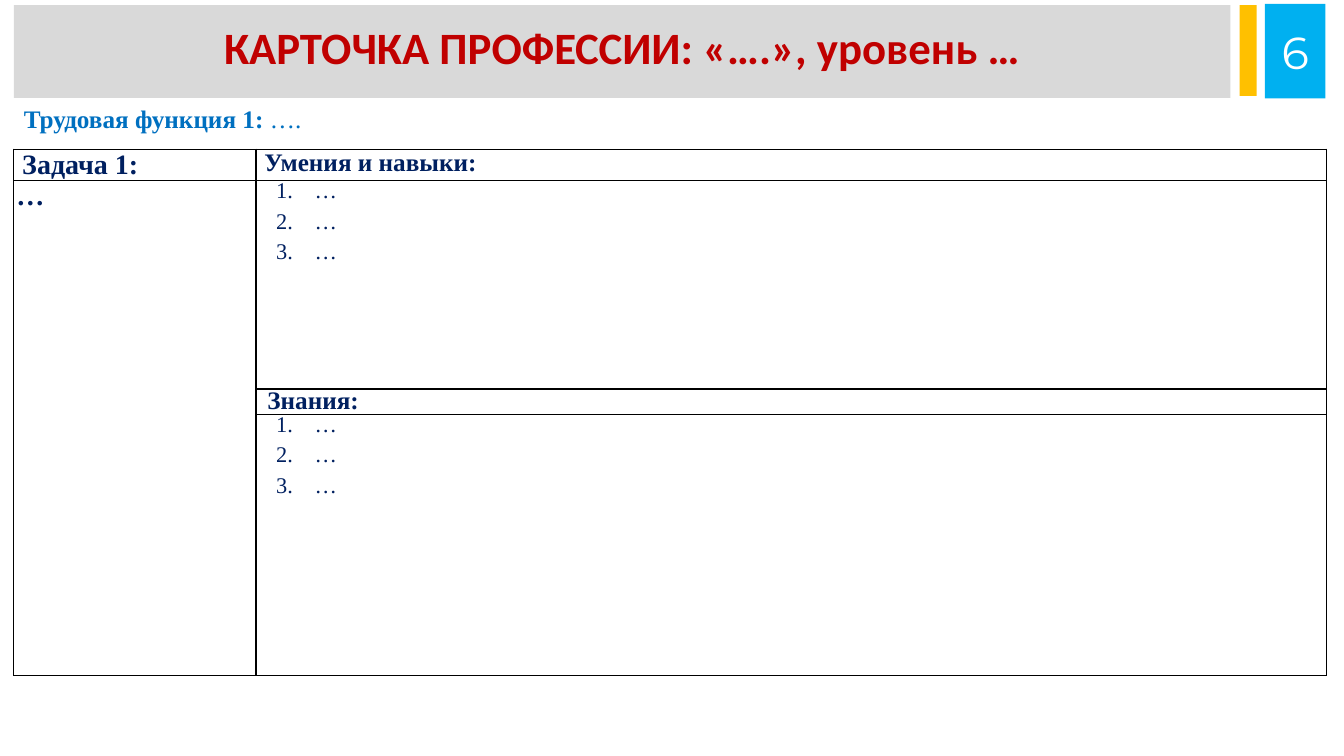
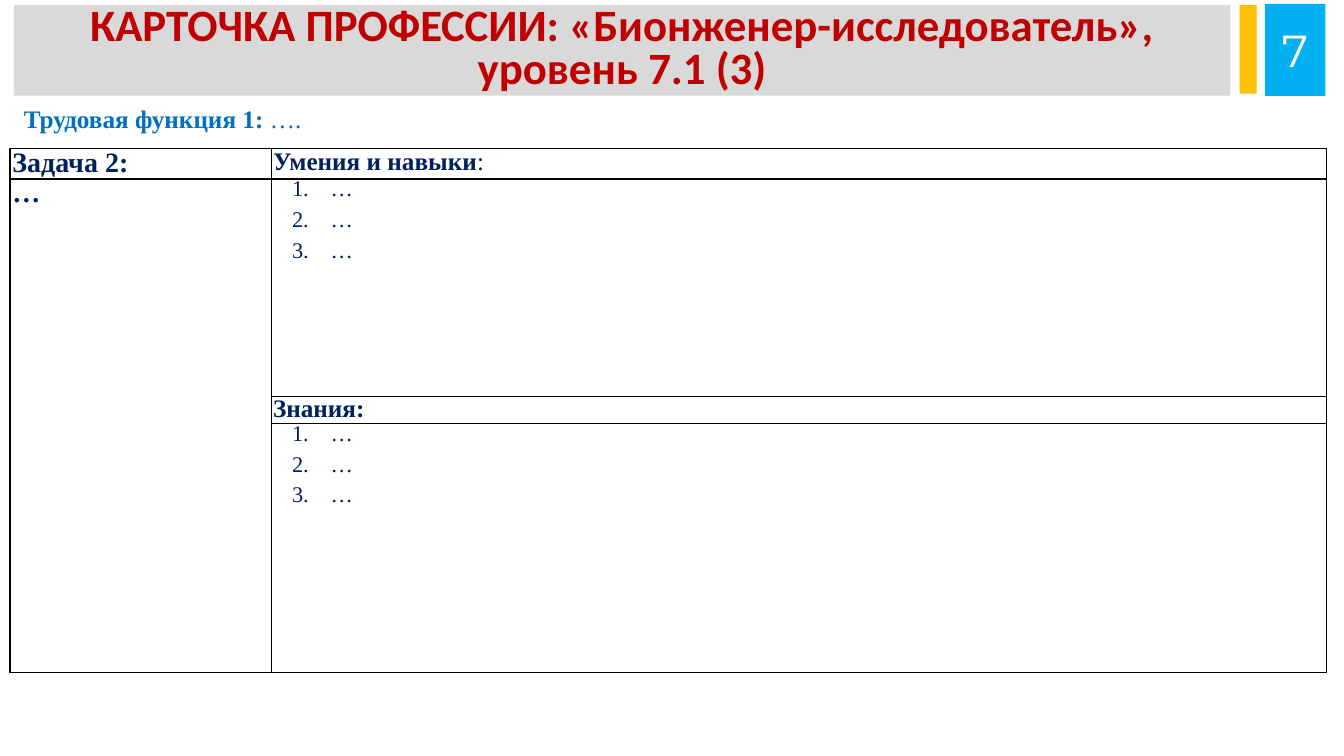
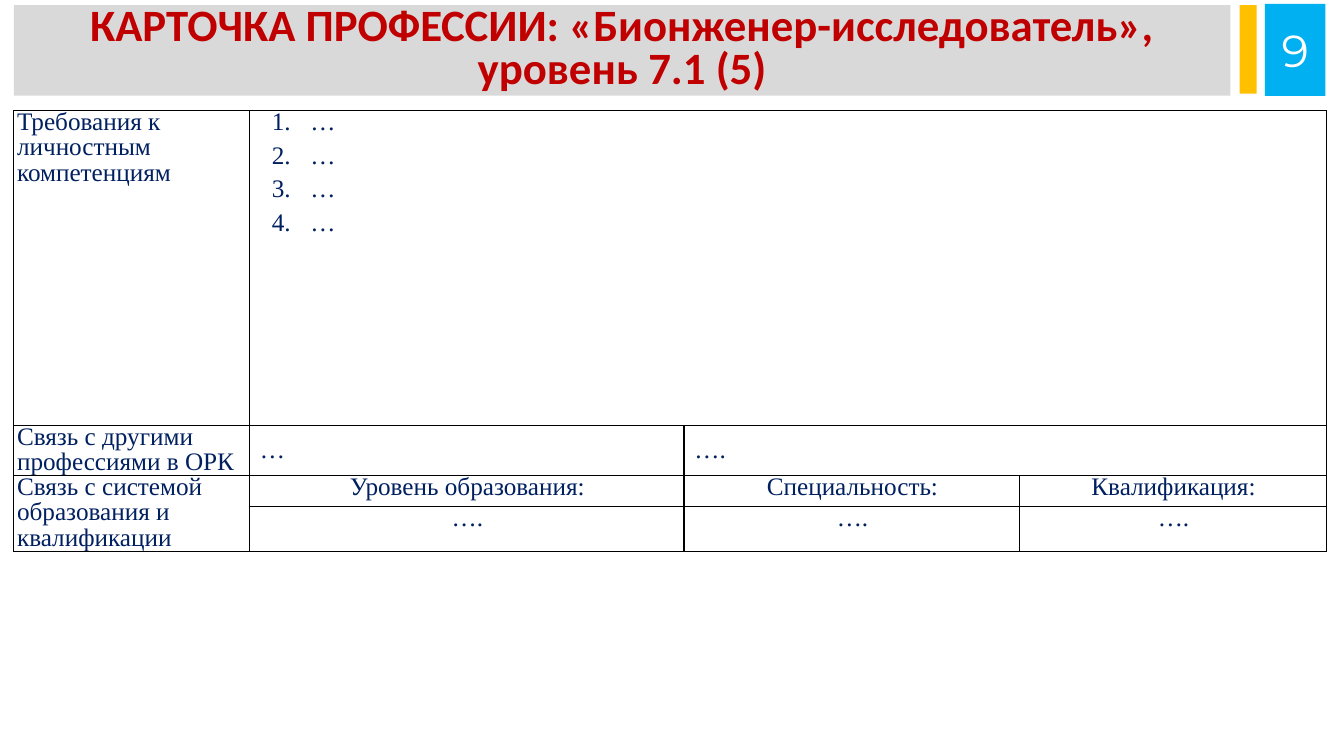
from lxml.etree import SubElement
from pptx import Presentation
from pptx.dml.color import RGBColor
from pptx.enum.shapes import MSO_SHAPE
from pptx.enum.text import MSO_ANCHOR, MSO_AUTO_SIZE, PP_ALIGN
from pptx.oxml.ns import qn
from pptx.util import Cm, Pt

COLORS = {
    "band": "D9D9D9", "accent": "FFC000", "number": "00B0F0", "title": "C00000",
    "function": "0070C0", "body": "002060", "border": "000000", "white": "FFFFFF",
}
SERIF = "Times New Roman"
FUNCTION = ("Трудовая функция 1: ", "….")

STYLES = {
    "task": {"size": 20, "left": 0.18},
    "skills": {"size": 18, "left": 0.18},
    "knowledge": {"size": 18, "left": 0.41, "indent": -0.15, "spacing": 0.9},
    "detail": {"size": 20, "left": 0.03},
    "tight task": {"size": 20, "left": 0.03, "spacing": 0.95},
    "tight heading": {"size": 18, "left": 0.41, "indent": -0.41, "spacing": 0.95,
                      "align": PP_ALIGN.JUSTIFY},
    "list": {"size": 16, "left": 1.45, "indent": -0.97, "spacing": 0.9,
             "align": PP_ALIGN.JUSTIFY, "numbered": True},
    "large list": {"size": 18, "left": 1.45, "indent": -0.97, "spacing": 0.9,
                   "align": PP_ALIGN.JUSTIFY, "numbered": True},
    "label": {"size": 18, "spacing": 0.9, "after": 4},
    "link": {"size": 18, "left": 0.18, "spacing": 0.9, "after": 4,
             "anchor": MSO_ANCHOR.MIDDLE},
    "centered": {"size": 18, "left": 0.03, "spacing": 0.9, "after": 4,
                 "align": PP_ALIGN.CENTER},
}


def task_cells(task, skills, task_style, detail_style, skills_style, knowledge_style):
    items = [("", "…")] * 3
    return [
        (0, 0, 0, 0, task_style, [(task, "")]),
        (0, 1, 0, 1, skills_style, [skills]),
        (1, 0, 3, 0, detail_style, [("…", "")]),
        (1, 1, 1, 1, "list", items),
        (2, 1, 2, 1, knowledge_style, [("Знания:", "")]),
        (3, 1, 3, 1, "list", items),
    ]


CARDS = [
    {
        "title": "КАРТОЧКА ПРОФЕССИИ: «….», уровень …",
        "number": "6", "band_height": 2.34, "function": FUNCTION,
        "corner": (0.35, 3.76), "inset": 0.03,
        "columns": [6.1, 26.97], "rows": [0.78, 5.26, 0.63, 6.58],
        "cells": task_cells("Задача 1:", ("Умения и навыки:", ""),
                            "task", "detail", "skills", "knowledge"),
    },
    {
        "title": "КАРТОЧКА ПРОФЕССИИ: «Бионженер-исследователь», уровень 7.1 (3)",
        "number": "7", "band_height": 2.28, "function": FUNCTION,
        "corner": (0.25, 3.75), "inset": 0.03,
        "columns": [6.6, 26.57], "rows": [0.76, 5.48, 0.68, 6.27],
        "cells": task_cells("Задача 2:", ("Умения и навыки", ":"), "tight task",
                            "tight task", "tight heading", "tight heading"),
    },
    {
        "title": "КАРТОЧКА ПРОФЕССИИ: «Бионженер-исследователь», уровень 7.1 (5)",
        "number": "9", "band_height": 2.28, "function": None,
        "corner": (0.35, 2.79), "inset": 0.08,
        "columns": [5.94, 10.95, 8.46, 7.72], "rows": [7.93, 1.26, 0.77, 1.14],
        "cells": [
            (0, 0, 0, 0, "label", [("", "Требования к личностным компетенциям")]),
            (0, 1, 0, 3, "large list", [("", "…")] * 4),
            (1, 0, 1, 0, "label", [("", "Связь с другими профессиями в ОРК")]),
            (1, 1, 1, 1, "link", [("", "…")]),
            (1, 2, 1, 3, "link", [("", "….")]),
            (2, 0, 3, 0, "label", [("", "Связь с системой образования и квалификации")]),
            (2, 1, 2, 1, "centered", [("", "Уровень образования:")]),
            (2, 2, 2, 2, "centered", [("", "Специальность:")]),
            (2, 3, 2, 3, "centered", [("", "Квалификация:")]),
        ] + [(3, column, 3, column, "centered", [("", "….")]) for column in (1, 2, 3)],
    },
]


def rgb(color):
    return RGBColor.from_string(COLORS[color])


def add_run(paragraph, text, font, size, color, bold=False):
    run = paragraph.add_run()
    run.text = text
    for name, value in {"name": font, "size": Pt(size), "bold": bold}.items():
        setattr(run.font, name, value)
    run.font.color.rgb = rgb(color)


def add_pair(paragraph, pair, size, color):
    for text, bold in zip(pair, (True, False)):
        if text:
            add_run(paragraph, text, SERIF, size, color, bold)


def add_block(slide, left, top, width, height, color):
    block = slide.shapes.add_shape(MSO_SHAPE.RECTANGLE, Cm(left), Cm(top), Cm(width), Cm(height))
    block.shadow.inherit = False
    block.fill.solid()
    block.fill.fore_color.rgb = rgb(color)
    block.line.fill.background()
    return block


def add_header(slide, card):
    height = card["band_height"]
    add_block(slide, 31.24, 0.13, 0.43, height - 0.05, "accent")
    number = add_block(slide, 31.88, 0.1, 1.52, height + 0.04, "number").text_frame
    number.vertical_anchor = MSO_ANCHOR.MIDDLE
    number.paragraphs[0].alignment = PP_ALIGN.CENTER
    add_run(number.paragraphs[0], card["number"], "Montserrat", 32, "white")

    title = slide.shapes.title
    box = {"left": 0.35, "top": 0.13, "width": 30.66, "height": height}
    for name, value in box.items():
        setattr(title, name, Cm(value))
    title.fill.solid()
    title.fill.fore_color.rgb = rgb("band")
    frame = title.text_frame
    frame.auto_size = MSO_AUTO_SIZE.NONE
    frame.vertical_anchor = MSO_ANCHOR.MIDDLE
    heading = frame.paragraphs[0]
    heading.alignment = PP_ALIGN.CENTER
    heading.line_spacing = 0.8
    add_run(heading, card["title"], "Calibri", 32, "title", True)


def add_function(slide, function):
    frame = slide.shapes.add_textbox(Cm(0.35), Cm(2.49), Cm(33.07), Cm(1.02)).text_frame
    frame.word_wrap = True
    add_pair(frame.paragraphs[0], function, 18, "function")


def format_cell(cell, inset):
    margins = {"margin_left": inset, "margin_right": inset, "margin_top": 0, "margin_bottom": 0}
    for name, value in margins.items():
        setattr(cell, name, Cm(value))
    properties = cell._tc.get_or_add_tcPr()
    for side in ("a:lnL", "a:lnR", "a:lnT", "a:lnB"):
        line = SubElement(properties, qn(side), w=str(Pt(1)))
        SubElement(SubElement(line, qn("a:solidFill")), qn("a:srgbClr"), val=COLORS["border"])
    cell.fill.background()


def fill_cell(cell, style, pairs):
    cell.vertical_anchor = style.get("anchor", MSO_ANCHOR.TOP)
    frame = cell.text_frame
    for index, pair in enumerate(pairs):
        paragraph = frame.add_paragraph() if index else frame.paragraphs[0]
        paragraph.alignment = style.get("align", PP_ALIGN.LEFT)
        paragraph.line_spacing = style.get("spacing", 1.0)
        paragraph.space_after = Pt(style.get("after", 6))
        properties = paragraph._p.get_or_add_pPr()
        properties.set("marL", str(Cm(style.get("left", 0))))
        properties.set("indent", str(Cm(style.get("indent", 0))))
        if style.get("numbered"):
            SubElement(properties, qn("a:buAutoNum"), type="arabicPeriod")
        add_pair(paragraph, pair, style["size"], "body")


def add_card_table(slide, card):
    columns, rows = card["columns"], card["rows"]
    left, top = card["corner"]
    table = slide.shapes.add_table(len(rows), len(columns), Cm(left), Cm(top),
                                   Cm(sum(columns)), Cm(sum(rows))).table
    table.first_row = table.horz_banding = False
    for column, width in zip(table.columns, columns):
        column.width = Cm(width)
    for row, height in zip(table.rows, rows):
        row.height = Cm(height)
    for cell in table.iter_cells():
        format_cell(cell, card["inset"])
    for row, column, last_row, last_column, style, pairs in card["cells"]:
        cell = table.cell(row, column)
        if (row, column) != (last_row, last_column):
            cell.merge(table.cell(last_row, last_column))
        fill_cell(cell, STYLES[style], pairs)


def main():
    deck = Presentation()
    deck.slide_width, deck.slide_height = Cm(33.87), Cm(19.05)
    for card in CARDS:
        slide = deck.slides.add_slide(deck.slide_layouts[5])
        add_header(slide, card)
        add_card_table(slide, card)
        if card["function"]:
            add_function(slide, card["function"])
    deck.save("out.pptx")


if __name__ == "__main__":
    main()
